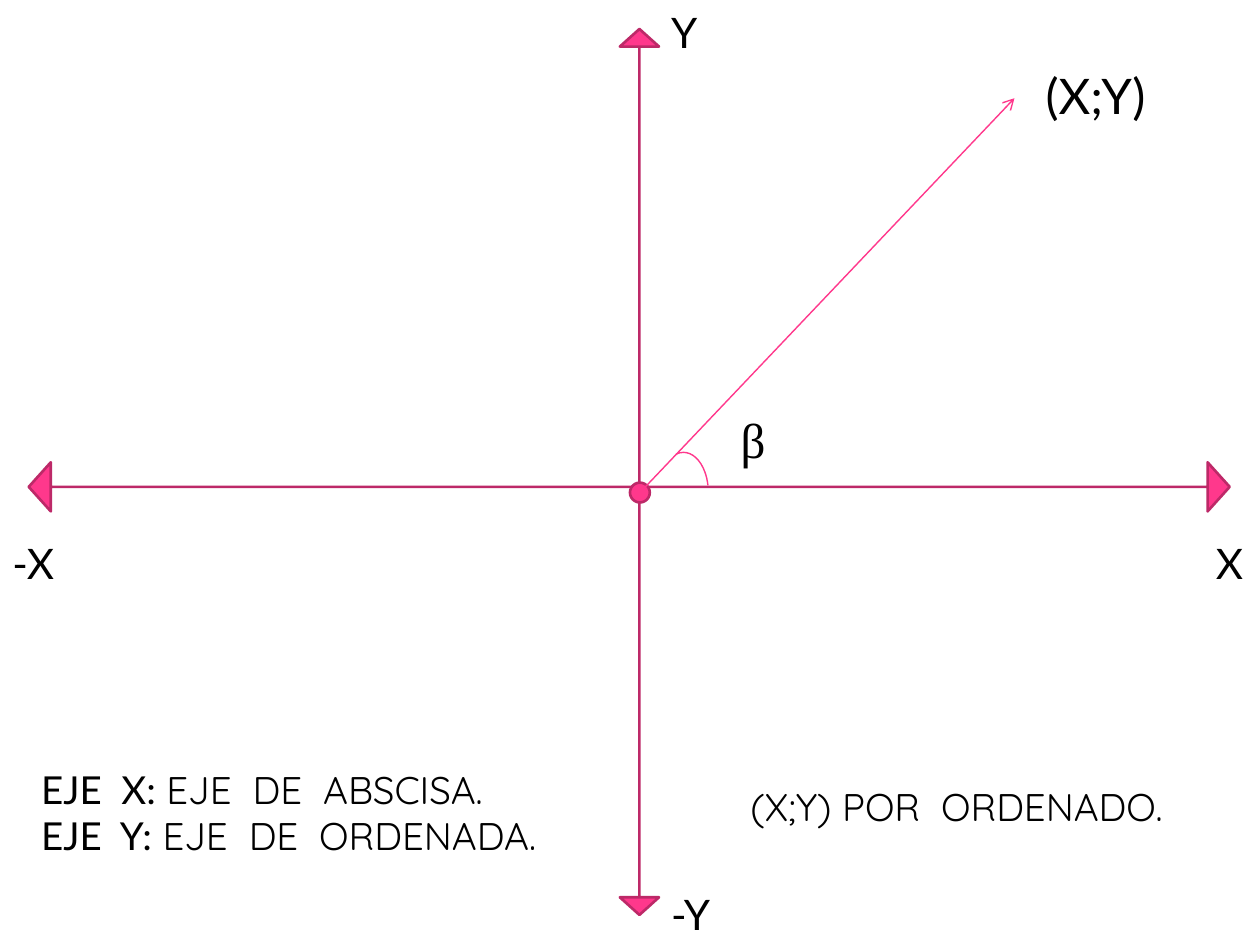
from lxml import etree
from pptx import Presentation
from pptx.dml.color import RGBColor
from pptx.enum import shapes, text
from pptx.oxml import ns
from pptx.util import Cm, Pt

HUES = {"pink": "FF388C", "plum": "BD2968", "ink": "000000"}
KIND = shapes.MSO_SHAPE


class Board:
    sans, light, serif = "Lato", "Quicksand", "Times New Roman"
    thick, thin = 1.5, 0.79

    def __init__(self, slide):
        self.slide = slide

    def hue(self, name):
        return RGBColor.from_string(HUES[name])

    def line(self, item, hue, width):
        item.line.color.rgb = self.hue(hue)
        item.line.width = Pt(width)

    def shape(self, kind, box, turn=0, adjust=()):
        item = self.slide.shapes.add_shape(kind, *map(Cm, box))
        item.shadow.inherit = False
        item.rotation = turn
        for i, value in enumerate(adjust):
            item.adjustments[i] = value
        return item

    def solid(self, kind, box, turn=0, adjust=()):
        item = self.shape(kind, box, turn, adjust)
        item.fill.solid()
        item.fill.fore_color.rgb = self.hue("pink")
        self.line(item, "plum", self.thick)

    def axis(self, box, turn=0):
        self.solid(KIND.LEFT_RIGHT_ARROW, box, turn, (0, 0.45))

    def arc(self, box, start, end):
        item = self.shape(KIND.ARC, box, adjust=(start, end))
        item.fill.background()
        self.line(item, "pink", self.thin)

    def arrow(self, *ends):
        item = self.slide.shapes.add_connector(
            shapes.MSO_CONNECTOR.STRAIGHT, *map(Cm, ends))
        self.line(item, "pink", self.thin)
        etree.SubElement(item.line._get_or_add_ln(), ns.qn("a:tailEnd"), type="arrow")
        etree.SubElement(item._element.spPr, ns.qn("a:effectLst"))

    def label(self, box, size, *rows, font=None):
        frame = self.slide.shapes.add_textbox(*map(Cm, box)).text_frame
        frame.word_wrap = False
        frame.auto_size = text.MSO_AUTO_SIZE.SHAPE_TO_FIT_TEXT
        for i, row in enumerate(rows):
            para = frame.add_paragraph() if i else frame.paragraphs[0]
            para.font.size = Pt(size)
            para.font.color.rgb = self.hue("ink")
            if font:
                para.font.name = font
                para.add_run().text = row
                continue
            for words, face in zip(row, (self.sans, self.light)):
                run = para.add_run()
                run.text = words
                run.font.name = face


def main():
    deck = Presentation()
    deck.slide_width, deck.slide_height = Cm(25.4), Cm(19.05)
    board = Board(deck.slides.add_slide(deck.slide_layouts[6]))

    board.axis((0.58, 9.32, 24.21, 0.99))
    board.axis((3.96, 9.12, 17.86, 0.79), 90)
    board.solid(KIND.FLOWCHART_CONNECTOR, (12.7, 9.73, 0.4, 0.4))

    for name, left, top, width in (
        ("Y", 13.28, 0, 1.12),
        ("-Y", 13.28, 17.78, 1.47),
        ("X", 24.26, 10.72, 1.14),
        ("-X", 0, 10.72, 1.5),
    ):
        board.label((left, top, width, 1.27), 24, name, font=board.sans)

    board.arrow(12.9, 9.93, 20.45, 1.98)
    board.label((14.68, 8.13, 1.02, 1.45), 28, "β", font=board.serif)
    board.arc((13.28, 9.12, 1, 1.6), 155.27, 206.88)
    board.label((20.83, 1.19, 3.07, 1.45), 28, "(X;Y)", font=board.sans)

    board.label((0.58, 15.32, 11.25, 2.13), 22,
                ("EJE  X:", " EJE  DE  ABSCISA."),
                ("EJE  Y:", " EJE  DE  ORDENADA."))
    board.label((14.88, 15.67, 9.32, 1.19), 22,
                "(X;Y) POR  ORDENADO.", font=board.light)

    deck.save("out.pptx")


if __name__ == "__main__":
    main()
